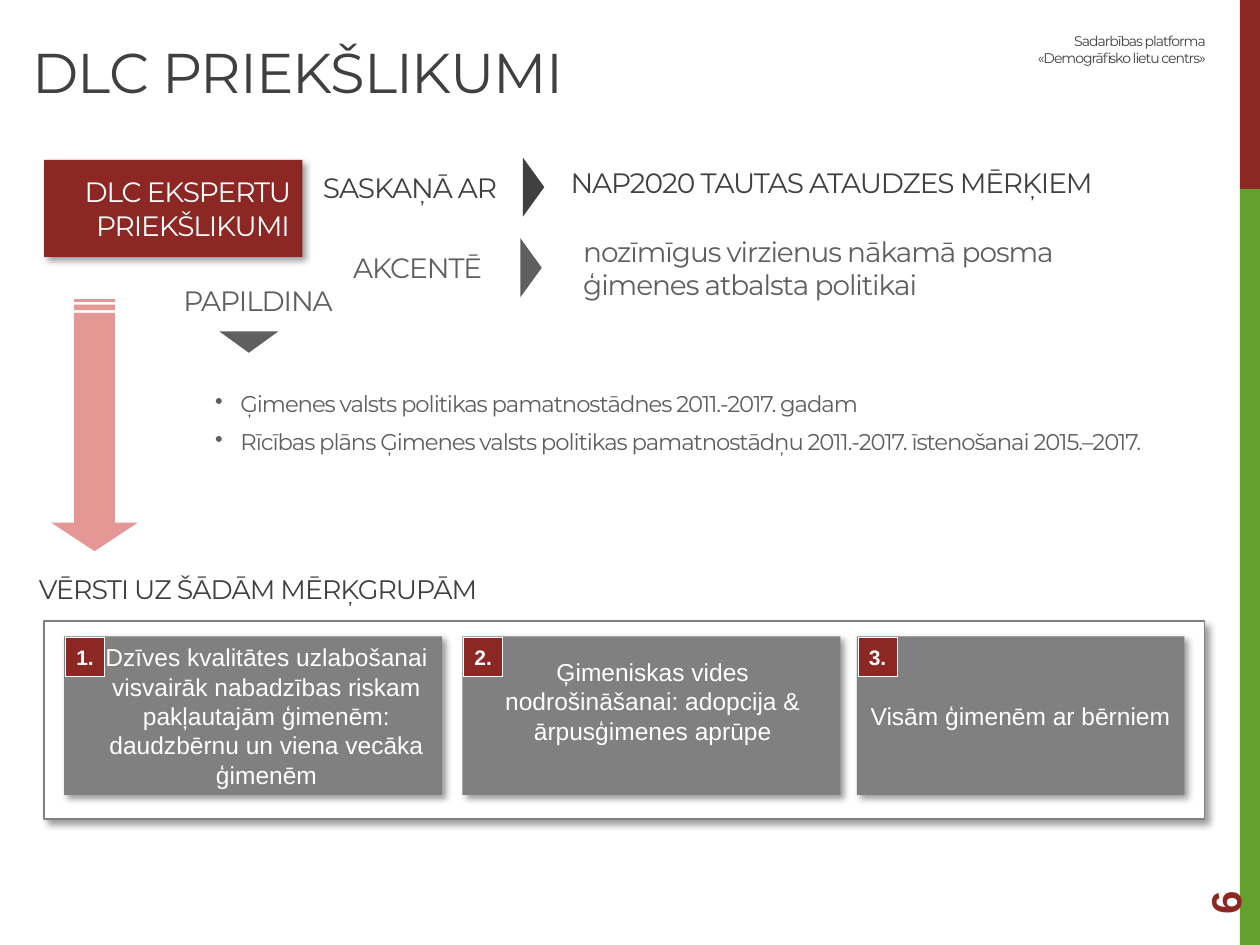
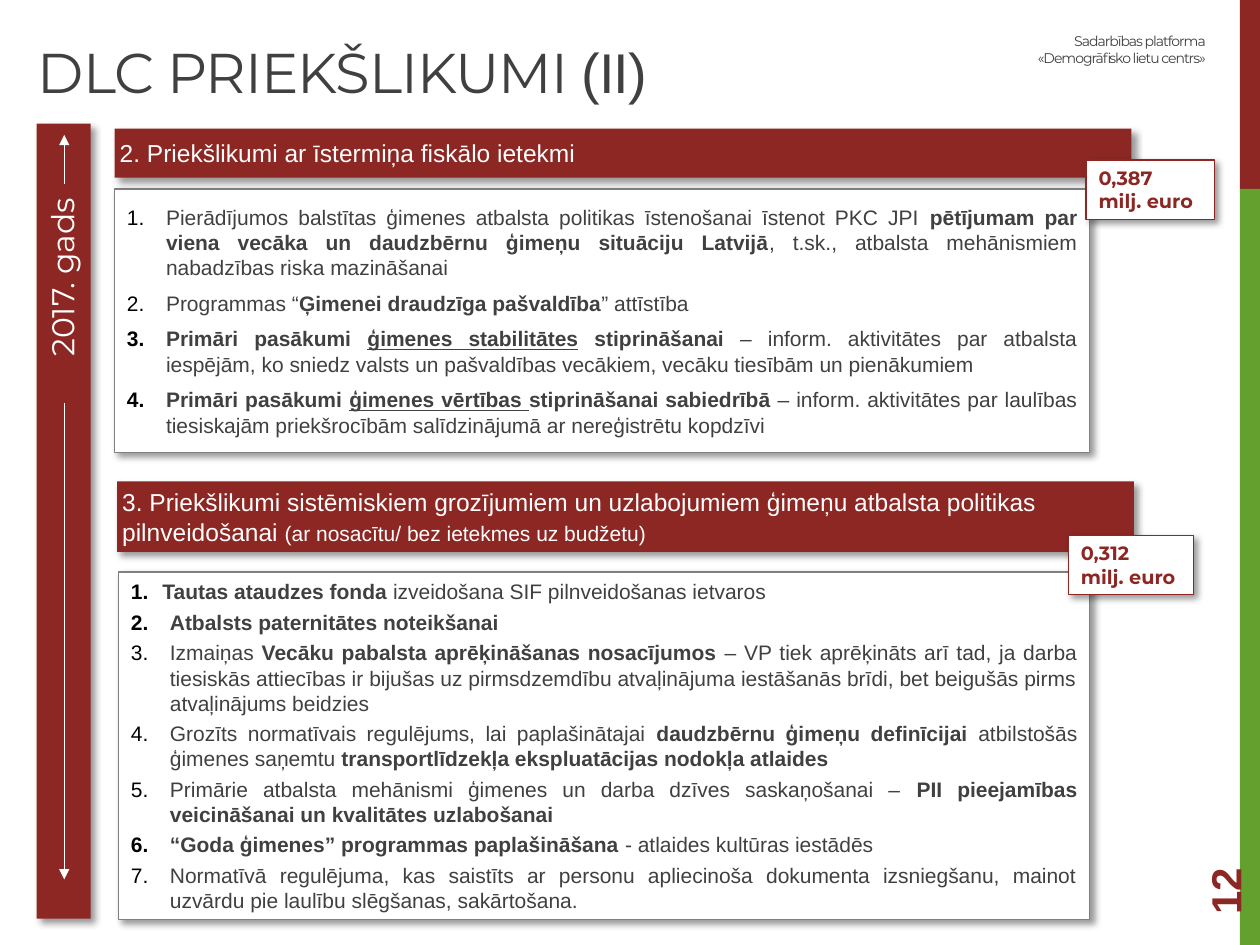
import pptx
import pptx.dml.color
import pptx.enum.shapes
import pptx.enum.text
import pptx.oxml
import pptx.oxml.ns
import pptx.util
from lxml import etree

Inches = pptx.util.Inches
Pt = pptx.util.Pt
SHAPE = pptx.enum.shapes.MSO_SHAPE
ALIGN = pptx.enum.text.PP_ALIGN
ANCHOR = pptx.enum.text.MSO_ANCHOR
AUTO_SIZE = pptx.enum.text.MSO_AUTO_SIZE
qn = pptx.oxml.ns.qn

COLORS = {"red": "8C2723", "green": "64A02D", "dark": "404040", "mid": "5F5F5F",
          "gray": "808080", "pink": "E49794", "white": "FFFFFF", "black": "000000"}
SERIF_FREE, DISPLAY = "Arial", "Montserrat"
TIGHT = -60
BOLD = {"bold": True}
UNDERLINED = {"bold": True, "underline": True}

# A paragraph is a list of runs; a run is a string or (string, font settings).
PLATFORM = [["Sadarbības platforma"], ["«Demogrāfisko lietu centrs»"]]

# text, box, size, colour, alignment, anchor
RELATIONS = [
    ("nozīmīgus virzienus nākamā posma ģimenes atbalsta politikai",
     (4.53, 1.78, 4.48, 0.69), 16, "mid", ALIGN.LEFT, ANCHOR.MIDDLE),
    ("SASKAŅĀ AR", (2.32, 1.25, 1.87, 0.47), 16, "dark", ALIGN.CENTER, ANCHOR.MIDDLE),
    ("PAPILDINA", (1.22, 2.05, 1.52, 0.67), 16, "mid", ALIGN.RIGHT, ANCHOR.MIDDLE),
    ("AKCENTĒ", (2.49, 1.96, 1.65, 0.33), 16, "mid", ALIGN.CENTER, ANCHOR.MIDDLE),
    ("NAP2020 TAUTAS ATAUDZES MĒRĶIEM",
     (4.43, 1.17, 5.67, 0.55), 16, "dark", ALIGN.LEFT, ANCHOR.MIDDLE),
    ("VĒRSTI UZ ŠĀDĀM MĒRĶGRUPĀM",
     (0.21, 4.3, 4.09, 0.55), 15.3, "dark", ALIGN.LEFT, ANCHOR.BOTTOM),
]
# left, top, rotation, colour
POINTERS = [(4, 1.4, 270, "dark"), (3.98, 2.04, 270, "mid"), (1.74, 2.63, 0, "mid")]

POLICY_PLANS = [
    ["Ģimenes valsts politikas pamatnostādnes 2011.-2017. gadam"],
    ["Rīcības plāns Ģimenes valsts politikas pamatnostādņu 2011.-2017. "
     "īstenošanai 2015.–2017."],
]

# left, width, left inset, bottom inset, paragraphs
TARGET_GROUPS = [
    (0.51, 3, 0.31, 0.08, [["Dzīves kvalitātes uzlabošanai"],
                           ["visvairāk nabadzības riskam pakļautajām ģimenēm:"],
                           ["daudzbērnu un viena vecāka ģimenēm"]]),
    (3.67, 3, 0.12, 0.31,
     [["Ģimeniskas vides nodrošināšanai: adopcija & ārpusģimenes aprūpe"]]),
    (6.8, 2.6, 0.1, 0.08, [["Visām ģimenēm ar bērniem"]]),
]

PROPOSALS = [
    {
        "heading": ["2. Priekšlikumi ar īstermiņa fiskālo ietekmi"],
        "heading_box": (0.91, 1.02, 8.07, 0.39),
        "list_box": (0.91, 1.5, 7.74, 2.09),
        "gap": 6,
        "first_indent": 0.31,
        "cost": "0,387",
        "cost_box": (8.62, 1.27, 1.02, 0.47),
        "items": [
            ["Pierādījumos balstītas ģimenes atbalsta politikas īstenošanai īstenot PKC JPI ",
             ("pētījumam par viena vecāka un daudzbērnu ģimeņu situāciju Latvijā", BOLD),
             ", t.sk., atbalsta mehānismiem nabadzības riska mazināšanai"],
            ["Programmas “", ("Ģimenei draudzīga pašvaldība", BOLD), "” attīstība"],
            [("Primāri pasākumi ", BOLD), ("ģimenes stabilitātes", UNDERLINED),
             (" stiprināšanai ", BOLD),
             "– inform. aktivitātes par atbalsta iespējām, ko sniedz valsts un "
             "pašvaldības vecākiem, vecāku tiesībām un pienākumiem"],
            [("Primāri pasākumi ", BOLD), ("ģimenes vērtības ", UNDERLINED),
             ("stiprināšanai sabiedrībā ", BOLD),
             "– inform. aktivitātes par laulības tiesiskajām priekšrocībām "
             "salīdzinājumā ar nereģistrētu kopdzīvi"],
        ],
    },
    {
        "heading": ["3. Priekšlikumi sistēmiskiem grozījumiem un uzlabojumiem ģimeņu "
                    "atbalsta politikas pilnveidošanai ",
                    ("(ar nosacītu/ bez ietekmes uz budžetu)", {"size": Pt(12)})],
        "heading_box": (0.93, 3.82, 8.07, 0.56),
        "list_box": (0.94, 4.54, 7.71, 2.76),
        "gap": 3,
        "first_indent": 0.25,
        "cost": "0,312",
        "cost_box": (8.48, 4.25, 0.99, 0.47),
        "items": [
            [("Tautas ataudzes fonda ", BOLD), "izveidošana SIF pilnveidošanas ietvaros"],
            [("Atbalsts paternitātes noteikšanai", BOLD)],
            ["Izmaiņas ", ("Vecāku pabalsta aprēķināšanas nosacījumos ", BOLD),
             "– VP tiek aprēķināts arī tad, ja darba tiesiskās attiecības ir bijušas uz "
             "pirmsdzemdību atvaļinājuma iestāšanās brīdi, bet beigušās pirms "
             "atvaļinājums beidzies"],
            ["Grozīts normatīvais regulējums, lai paplašinātajai ",
             ("daudzbērnu ģimeņu definīcijai ", BOLD), "atbilstošās ģimenes saņemtu ",
             ("transportlīdzekļa ekspluatācijas nodokļa atlaides", BOLD)],
            ["Primārie atbalsta mehānismi ģimenes un darba dzīves saskaņošanai – ",
             ("PII pieejamības veicināšanai un kvalitātes uzlabošanai", BOLD)],
            [("“Goda ģimenes” programmas paplašināšana", BOLD),
             " - atlaides kultūras iestādēs"],
            ["Normatīvā regulējuma, kas saistīts ar personu apliecinoša dokumenta "
             "izsniegšanu, mainot uzvārdu pie laulību slēgšanas, sakārtošana."],
        ],
    },
]


def rgb(color):
    return pptx.dml.color.RGBColor.from_string(COLORS[color])


def write(shape, paragraphs, size, color, font=SERIF_FREE, align=ALIGN.LEFT,
          anchor=ANCHOR.MIDDLE, insets=(0.1, 0.05, 0.1, 0.05), wrap=True,
          bold=None, spc=None, before=0):
    frame = shape.text_frame
    frame.auto_size = AUTO_SIZE.NONE
    frame.word_wrap = wrap
    frame.vertical_anchor = anchor
    (frame.margin_left, frame.margin_top,
     frame.margin_right, frame.margin_bottom) = map(Inches, insets)
    for index, runs in enumerate(paragraphs):
        paragraph = frame.add_paragraph() if index else frame.paragraphs[0]
        paragraph.alignment = align
        paragraph.space_before = Pt(before)
        paragraph.font.name = font
        paragraph.font.size = Pt(size)
        paragraph.font.bold = bold
        paragraph.font.color.rgb = rgb(color)
        if spc:
            paragraph.font._rPr.set("spc", str(spc))
        for piece in runs:
            text, settings = (piece, {}) if isinstance(piece, str) else piece
            run = paragraph.add_run()
            run.text = text
            for name, value in settings.items():
                setattr(run.font, name, value)
    return frame


def add_text(slide, box, paragraphs, size, color, rotation=0, **style):
    text_box = slide.shapes.add_textbox(*map(Inches, box))
    text_box.rotation = rotation
    return write(text_box, paragraphs, size, color, **style)


def add_block(slide, box, fill, line=None, width=0.75, shadow=False,
              kind=SHAPE.RECTANGLE, rotation=0, adjustments=()):
    block = slide.shapes.add_shape(kind, *map(Inches, box))
    block.rotation = rotation
    for index, value in enumerate(adjustments):
        block.adjustments[index] = value
    block.fill.solid()
    block.fill.fore_color.rgb = rgb(fill)
    if line:
        block.line.color.rgb = rgb(line)
        block.line.width = Pt(width)
    else:
        block.line.fill.background()
    block.shadow.inherit = False
    if shadow:
        effects = block._element.spPr.find(qn("a:effectLst"))
        outer = etree.SubElement(effects, qn("a:outerShdw"), blurRad=str(Pt(4)),
                                 dist=str(Pt(3)), dir="2700000", algn="tl",
                                 rotWithShape="0")
        tint = etree.SubElement(outer, qn("a:srgbClr"), val=COLORS["black"])
        etree.SubElement(tint, qn("a:alpha"), val="40000")
    return block


def add_marker(paragraph, indent, char=None):
    """Hang the paragraph on a bullet character, or on a black number if there is none."""
    properties = paragraph._p.get_or_add_pPr()
    properties.set("marL", str(Inches(indent)))
    properties.set("indent", str(-Inches(indent)))
    if char:
        marker = pptx.oxml.parse_xml(
            f'<a:buChar {pptx.oxml.ns.nsdecls("a")} char="{char}"/>')
    else:
        marker = pptx.oxml.parse_xml(
            f'<a:buAutoNum {pptx.oxml.ns.nsdecls("a")} type="arabicPeriod"/>')
    default_run = properties.find(qn("a:defRPr"))
    default_run.addprevious(marker)
    if not char:
        tint = etree.Element(qn("a:buClr"))
        etree.SubElement(tint, qn("a:srgbClr"), val=COLORS["black"])
        marker.addprevious(tint)


def add_arrow(slide, x, tip, tail):
    arrow = slide.shapes.add_connector(pptx.enum.shapes.MSO_CONNECTOR.STRAIGHT,
                                       Inches(x), Inches(tip), Inches(x), Inches(tail))
    arrow.line.color.rgb = rgb("white")
    arrow.line.width = Pt(0.75)
    etree.SubElement(arrow.line._get_or_add_ln(), qn("a:headEnd"), type="triangle")
    etree.SubElement(arrow._element.spPr, qn("a:effectLst"))


def start_slide(deck, title_runs, title_left, number):
    slide = deck.slides.add_slide(deck.slide_layouts[5])
    add_block(slide, (9.84, 0, 0.16, 1.5), "red")
    add_block(slide, (9.84, 1.5, 0.16, 6), "green")
    add_text(slide, (7.68, 0.21, 1.99, 0.35), PLATFORM, 8, "dark", font=DISPLAY,
             align=ALIGN.RIGHT, anchor=ANCHOR.TOP, spc=TIGHT)
    title = slide.shapes.title
    title.left, title.top, title.width, title.height = map(
        Inches, (title_left, 0.13, 6.33, 0.75))
    write(title, [title_runs], 32, "dark", font=DISPLAY, anchor=ANCHOR.BOTTOM, spc=TIGHT)
    add_text(slide, (9, 6.44, 1.44, 0.4), [[str(number)]], 24, "red", rotation=270,
             bold=True)
    return slide


def build_overview(deck):
    slide = start_slide(deck, ["DLC PRIEKŠLIKUMI"], 0.16, 6)
    add_block(slide, (0.35, 4.93, 9.21, 1.57), "white", line="gray", shadow=True)
    experts = add_block(slide, (0.35, 1.27, 2.05, 0.77), "red", shadow=True)
    write(experts, [["DLC EKSPERTU PRIEKŠLIKUMI"]], 16, "white", font=DISPLAY,
          align=ALIGN.RIGHT, spc=TIGHT)
    for text, box, size, color, align, anchor in RELATIONS:
        add_text(slide, box, [[text]], size, color, font=DISPLAY, align=align,
                 anchor=anchor, spc=TIGHT)
    for left, top, rotation, color in POINTERS:
        add_block(slide, (left, top, 0.47, 0.17), color, kind=SHAPE.DOWN_ARROW,
                  rotation=rotation, adjustments=(1, 1))
    plans = add_text(slide, (1.61, 2.88, 8.11, 0.95), POLICY_PLANS, 13, "mid",
                     font=DISPLAY, spc=TIGHT, before=6)
    for paragraph in plans.paragraphs:
        add_marker(paragraph, 0.2, "•")
    for number, (left, width, inset, bottom, text) in enumerate(TARGET_GROUPS, 1):
        card = add_block(slide, (left, 5.05, width, 1.26), "gray", shadow=True)
        write(card, text, 14, "white", align=ALIGN.CENTER,
              insets=(inset, 0.08, 0.1, bottom))
        badge = add_block(slide, (left + 0.01, 5.06, 0.31, 0.31), "red", line="white",
                          width=0.5)
        write(badge, [[f"{number}."]], 12, "white", align=ALIGN.CENTER,
              insets=(0, 0, 0, 0), wrap=False, bold=True)
    add_block(slide, (-0.25, 3.03, 2, 0.69), "pink", kind=SHAPE.STRIPED_RIGHT_ARROW,
              rotation=90, adjustments=(0.47, 0.33))


def build_proposals(deck):
    slide = start_slide(deck, ["DLC PRIEKŠLIKUMI ", ("(II)", {"name": SERIF_FREE})],
                        0.2, 12)
    year = add_block(slide, (-2.65, 3.92, 6.31, 0.43), "red", shadow=True, rotation=270)
    write(year, [["2017. gads"]], 18, "white", font=DISPLAY, align=ALIGN.RIGHT,
          anchor=ANCHOR.BOTTOM, insets=(0.1, 0, 0.59, 0.08))
    add_arrow(slide, 0.51, 1.07, 1.46)
    add_arrow(slide, 0.51, 6.98, 3.2)
    for part in PROPOSALS:
        panel = add_block(slide, part["list_box"], "white", line="gray", shadow=True)
        items = write(panel, part["items"], 12, "dark", align=ALIGN.JUSTIFY,
                      before=part["gap"])
        for index, paragraph in enumerate(items.paragraphs):
            add_marker(paragraph, 0.31 if index else part["first_indent"])
        heading = add_block(slide, part["heading_box"], "red", shadow=True)
        write(heading, [part["heading"]], 14, "white", insets=(0.04, 0.05, 0.04, 0.05))
    for part in PROPOSALS:
        cost = add_block(slide, part["cost_box"], "white", line="red", shadow=True)
        write(cost, [[part["cost"]], ["milj. euro"]], 11, "red", font=DISPLAY,
              anchor=ANCHOR.TOP, wrap=False, bold=True)


def main():
    deck = pptx.Presentation()
    deck.slide_width, deck.slide_height = Inches(10), Inches(7.5)
    build_overview(deck)
    build_proposals(deck)
    deck.save("out.pptx")


if __name__ == "__main__":
    main()
